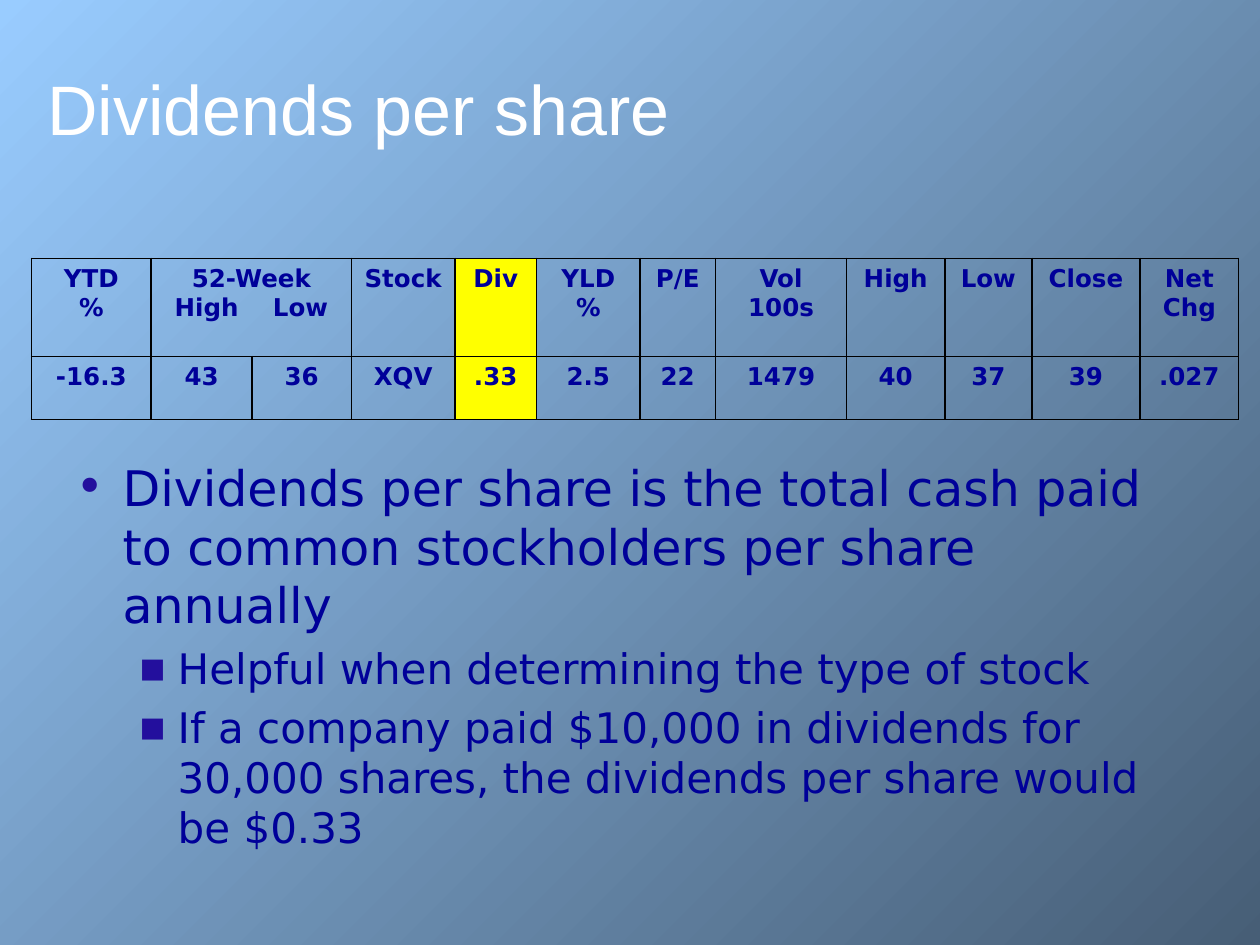
from lxml.etree import SubElement
from pptx import Presentation
from pptx.dml.color import RGBColor
from pptx.enum.text import MSO_ANCHOR, MSO_AUTO_SIZE, PP_ALIGN
from pptx.oxml.ns import qn
from pptx.util import Pt

COLORS = {
    "sky": "99CCFF", "slate": "475E76", "title": "FFFFFF", "text": "000099",
    "bullet": "230F9D", "highlight": "FFFF00", "border": "000000",
}
TITLE = "Dividends per share"
# heading lines, value, column width
COLUMNS = [
    (["YTD", "%"], "-16.3", 68.4),
    (["52-Week", "High Low"], "43", 57.6),
    ([], "36", 56.9),
    (["Stock"], "XQV", 59),
    (["Div"], ".33", 46.8),
    (["YLD", "%"], "2.5", 59),
    (["P/E"], "22", 43.2),
    (["Vol", "100s"], "1479", 74.9),
    (["High"], "40", 56.2),
    (["Low"], "37", 49.7),
    (["Close"], "39", 61.9),
    (["Net", "Chg"], ".027", 56.2),
]
ROW_HEIGHTS = [56.2, 36]
HIGHLIGHT_COLUMN = 4
WIDE_COLUMN = 1
BULLETS = [
    (0, "Dividends per share is the total cash paid to common stockholders per share annually"),
    (1, "Helpful when determining the type of stock"),
    (1, "If a company paid $10,000 in dividends for 30,000 shares, "
        "the dividends per share would be $0.33"),
]
LEVELS = [
    {"size": 28, "mark": "•", "left": 27, "hang": 27},
    {"size": 24, "mark": "▪", "left": 58.5, "hang": 22.5},
]
BODY_FONT = "DejaVu Sans"
TITLE_FONT = {"name": "Arial", "size": Pt(40), "bold": False}
CELL_FONT = {"name": BODY_FONT, "size": Pt(14), "bold": True}


def rgb(name):
    return RGBColor.from_string(COLORS[name])


def add_span(para, text, color, font):
    span = para.add_run()
    span.text = text
    for key, value in font.items():
        setattr(span.font, key, value)
    span.font.color.rgb = rgb(color)
    return span


def add_border(cell):
    properties = cell._tc.get_or_add_tcPr()
    for index, side in enumerate(("lnL", "lnR", "lnT", "lnB")):
        line = SubElement(properties, qn(f"a:{side}"), w=str(Pt(1)))
        fill = SubElement(line, qn("a:solidFill"))
        SubElement(fill, qn("a:srgbClr"), val=COLORS["border"])
        properties.insert(index, line)


def fill_cell(cell, lines, highlighted):
    frame = cell.text_frame
    for index, line in enumerate(lines):
        para = frame.add_paragraph() if index else frame.paragraphs[0]
        para.alignment = PP_ALIGN.CENTER
        first, gap, second = line.partition(" ")
        add_span(para, first, "text", CELL_FONT)
        if gap:
            # letter spacing widens the gap between the two sub-headings
            space = add_span(para, gap, "text", CELL_FONT)
            space.font._element.set("spc", "1470")
            add_span(para, second, "text", CELL_FONT)
    if highlighted:
        cell.fill.solid()
        cell.fill.fore_color.rgb = rgb("highlight")
    else:
        cell.fill.background()
    add_border(cell)


def add_bullet(para, mark, left, hang):
    properties = para._p.get_or_add_pPr()
    properties.set("marL", str(Pt(left)))
    properties.set("indent", str(-Pt(hang)))
    color = SubElement(properties, qn("a:buClr"))
    SubElement(color, qn("a:srgbClr"), val=COLORS["bullet"])
    SubElement(properties, qn("a:buFont"), typeface=BODY_FONT)
    SubElement(properties, qn("a:buChar"), char=mark)


def paint_background(page):
    fill = page.background.fill
    fill.gradient()
    fill.gradient_angle = 315
    for stop, name, position in zip(fill.gradient_stops, ("sky", "slate"), (0, 1)):
        stop.color.rgb = rgb(name)
        stop.position = position


def add_title(page):
    title = page.shapes.title
    title.left, title.top, title.width, title.height = Pt(19.8), Pt(20.5), Pt(680.4), Pt(68.4)
    frame = title.text_frame
    frame.vertical_anchor = MSO_ANCHOR.BOTTOM
    frame.auto_size = MSO_AUTO_SIZE.NONE
    frame.paragraphs[0].alignment = PP_ALIGN.LEFT
    add_span(frame.paragraphs[0], TITLE, "title", TITLE_FONT)


def add_quote_table(page):
    width = sum(column[2] for column in COLUMNS)
    table = page.shapes.add_table(
        len(ROW_HEIGHTS), len(COLUMNS), Pt(18), Pt(147.6), Pt(width), Pt(sum(ROW_HEIGHTS))
    ).table
    table.first_row = table.horz_banding = False
    for row, height in zip(table.rows, ROW_HEIGHTS):
        row.height = Pt(height)
    for index, (heading, value, column_width) in enumerate(COLUMNS):
        table.columns[index].width = Pt(column_width)
        for row, lines in enumerate((heading, [value])):
            fill_cell(table.cell(row, index), lines, index == HIGHLIGHT_COLUMN)
    table.cell(0, WIDE_COLUMN).merge(table.cell(0, WIDE_COLUMN + 1))


def add_explanation(page):
    box = page.shapes.add_textbox(Pt(36), Pt(257.8), Pt(648), Pt(216))
    frame = box.text_frame
    frame.word_wrap = True
    for index, (level, text) in enumerate(BULLETS):
        style = LEVELS[level]
        para = frame.add_paragraph() if index else frame.paragraphs[0]
        para.level = level
        para.space_before = Pt(style["size"] * 0.2)
        add_bullet(para, style["mark"], style["left"], style["hang"])
        add_span(para, text, "text", {"name": BODY_FONT, "size": Pt(style["size"])})


def main():
    deck = Presentation()
    deck.slide_width, deck.slide_height = Pt(720), Pt(540)
    page = deck.slides.add_slide(deck.slide_layouts[5])
    paint_background(page)
    add_title(page)
    add_quote_table(page)
    add_explanation(page)
    deck.save("out.pptx")


if __name__ == "__main__":
    main()
